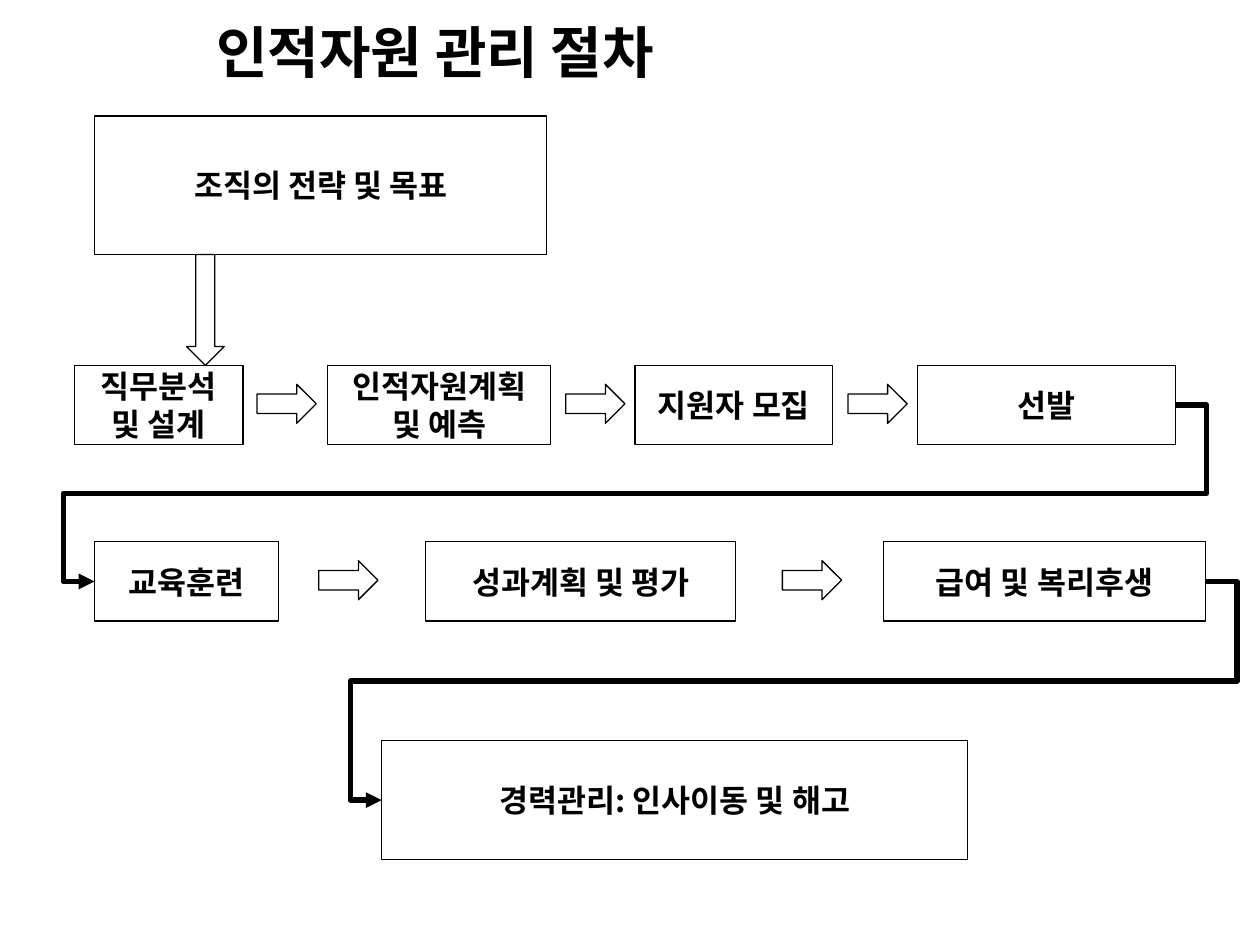
"""Build a slide with the flow of human resource management."""
from dataclasses import dataclass

from lxml import etree
from pptx import Presentation
from pptx.dml.color import RGBColor
from pptx.enum.shapes import MSO_CONNECTOR, MSO_SHAPE
from pptx.enum.text import MSO_ANCHOR, PP_ALIGN
from pptx.oxml.ns import qn
from pptx.shapes.autoshape import Shape
from pptx.slide import Slide
from pptx.util import Inches, Length, Pt

RECT, DOWN, RIGHT = MSO_SHAPE.RECTANGLE, MSO_SHAPE.DOWN_ARROW, MSO_SHAPE.RIGHT_ARROW
ELBOW = MSO_CONNECTOR.ELBOW
MIDDLE, CENTER = MSO_ANCHOR.MIDDLE, PP_ALIGN.CENTER
COLORS = {"ink": "000000", "paper": "FFFFFF"}
FONT = "Noto Sans CJK KR"
WIDE, HIGH = Inches(10), Inches(7.5)
COLS, ROWS = 100, 75
TOP, LOW, TALL = 29, 43, 6.3
SITE_LEFT, SITE_RIGHT = 1, 3
STUB = 2.5


@dataclass(frozen=True)
class Area:
    col: float
    row: float
    cols: float
    rows: float

    def place(self) -> tuple[Length, ...]:
        return (across(self.col), down(self.row), across(self.cols), down(self.rows))


@dataclass(frozen=True)
class Step:
    text: str
    area: Area


@dataclass(frozen=True)
class Link:
    start: int
    end: int
    turn: float


TITLE = Step("인적자원 관리 절차", Area(9.7, 0.5, 49.7, 7.1))
STEPS = (
    Step("조직의 전략 및 목표", Area(7.5, 9.2, 35.9, 11)),
    Step("직무분석\n및 설계", Area(5.9, TOP, 13.4, TALL)),
    Step("인적자원계획\n및 예측", Area(26, TOP, 17.7, TALL)),
    Step("지원자 모집", Area(50.4, TOP, 15.7, TALL)),
    Step("선발", Area(72.8, TOP, 20.5, TALL)),
    Step("교육훈련", Area(7.5, LOW, 14.6, TALL)),
    Step("성과계획 및 평가", Area(33.8, LOW, 24.6, TALL)),
    Step("급여 및 복리후생", Area(70.1, LOW, 25.6, TALL)),
    Step("경력관리: 인사이동 및 해고", Area(30.3, 58.8, 46.5, 9.4)),
)
ARROWS = ((TOP, (20.4, 44.9, 67.3)), (LOW, (25.3, 62.1)))
LINKS = (Link(4, 5, 0.5), Link(7, 8, 0.455))


def across(cols: float) -> Length:
    return Length(round(WIDE * cols / COLS))


def down(rows: float) -> Length:
    return Length(round(HIGH * rows / ROWS))


def color(name: str) -> RGBColor:
    return RGBColor.from_string(COLORS[name])


def write(shape: Shape, text: str, size: float) -> None:
    frame = shape.text_frame
    frame.word_wrap = True
    frame.vertical_anchor = MIDDLE
    frame.margin_left = frame.margin_right = 0
    frame.margin_top = frame.margin_bottom = 0
    para = frame.paragraphs[0]
    para.text = text
    para.alignment = CENTER
    for run in para.runs:
        font = run.font
        font.size, font.bold, font.name = Pt(size), True, FONT
        font.color.rgb = color("ink")
        etree.SubElement(font._element, qn("a:ea"), typeface=FONT)


def draw_shape(slide: Slide, kind: MSO_SHAPE, area: Area) -> Shape:
    shape = slide.shapes.add_shape(kind, *area.place())
    shape.shadow.inherit = False
    shape.fill.solid()
    shape.fill.fore_color.rgb = color("paper")
    shape.line.color.rgb = color("ink")
    shape.line.width = Pt(0.75)
    return shape


def draw_step(slide: Slide, step: Step) -> Shape:
    shape = draw_shape(slide, RECT, step.area)
    write(shape, step.text, 18)
    return shape


def draw_link(slide: Slide, link: Link, boxes: list[Shape]) -> None:
    line = slide.shapes.add_connector(ELBOW, 0, 0, 0, 0)
    line.begin_connect(boxes[link.start], SITE_RIGHT)
    line.end_connect(boxes[link.end], SITE_LEFT)
    line.line.color.rgb = color("ink")
    line.line.width = Pt(3)
    props = line._element.spPr
    etree.SubElement(props.find(qn("a:ln")), qn("a:tailEnd"), type="triangle")
    etree.SubElement(props, qn("a:effectLst"))
    geom = props.find(qn("a:prstGeom"))
    geom.set("prst", "bentConnector5")
    guides = geom.find(qn("a:avLst"))
    if guides is None:
        guides = etree.SubElement(geom, qn("a:avLst"))
    stub = across(STUB) / line.width
    for num, share in enumerate((-stub, link.turn, 1 + stub), 1):
        rule = f"val {round(share * 100000)}"
        etree.SubElement(guides, qn("a:gd"), name=f"adj{num}", fmla=rule)


def main() -> None:
    deck = Presentation()
    deck.slide_width, deck.slide_height = WIDE, HIGH
    slide = deck.slides.add_slide(deck.slide_layouts[6])
    write(slide.shapes.add_textbox(*TITLE.area.place()), TITLE.text, 32)
    boxes = [draw_step(slide, step) for step in STEPS]
    draw_shape(slide, DOWN, Area(14.8, 20.2, 3, 8.8))
    for row, cols in ARROWS:
        for col in cols:
            draw_shape(slide, RIGHT, Area(col, row + 1.5, 4.7, 3.1))
    for link in LINKS:
        draw_link(slide, link, boxes)
    deck.save("out.pptx")


if __name__ == "__main__":
    main()
